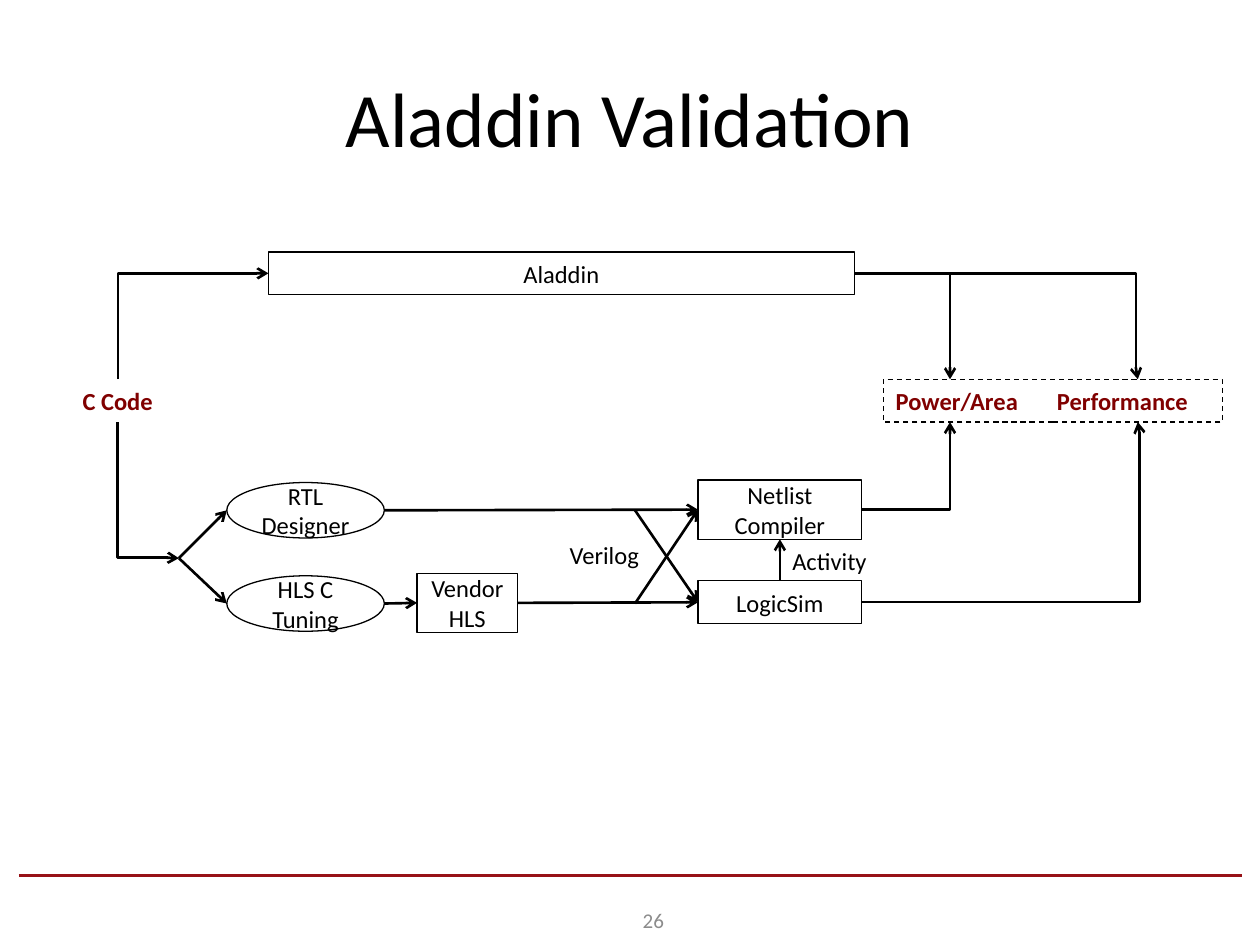
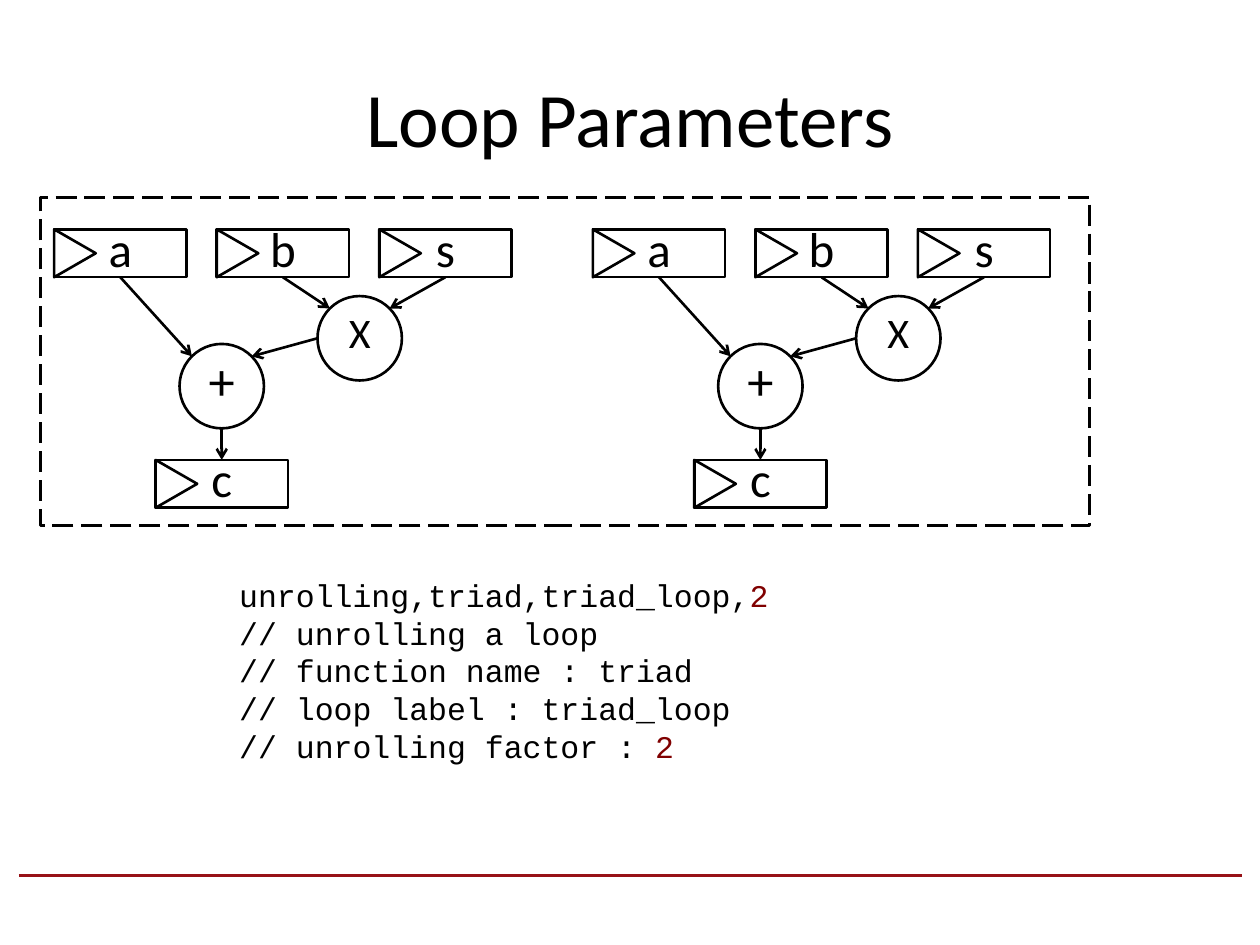
"""Build two slides: a validation flow and an unrolled loop datapath."""
from dataclasses import dataclass
from math import cos, radians, sin
from typing import NamedTuple

from lxml import etree
from pptx import Presentation
from pptx.dml.color import RGBColor
from pptx.enum.dml import MSO_LINE
from pptx.enum.shapes import MSO_CONNECTOR, MSO_SHAPE
from pptx.enum.text import MSO_ANCHOR, PP_ALIGN
from pptx.oxml.ns import qn
from pptx.util import Emu, Inches, Pt

COLORS = {"ink": "000000", "accent": "800000", "rule": "971217", "number": "8C8C8C"}
BODY_FONT, CODE_FONT = "Calibri", "Courier New"
WIDTH, HEIGHT = Inches(10), Inches(7.5)
COLUMNS, ROWS = 100, 75
TITLE_ONLY = 5
TOP, LEFT, BOTTOM, RIGHT = range(4)
RECTANGLE, OVAL, TRIANGLE = MSO_SHAPE.RECTANGLE, MSO_SHAPE.OVAL, MSO_SHAPE.ISOSCELES_TRIANGLE
STRAIGHT, ELBOW = MSO_CONNECTOR.STRAIGHT, MSO_CONNECTOR.ELBOW
DASH, LONG_DASH = MSO_LINE.DASH, MSO_LINE.LONG_DASH
ALIGN_LEFT, ALIGN_CENTER, ALIGN_RIGHT = PP_ALIGN.LEFT, PP_ALIGN.CENTER, PP_ALIGN.RIGHT
ANCHOR_TOP, ANCHOR_MIDDLE, ANCHOR_BOTTOM = MSO_ANCHOR.TOP, MSO_ANCHOR.MIDDLE, MSO_ANCHOR.BOTTOM
REGISTER_WIDTH, REGISTER_HEIGHT, REGISTER_STEP = 10.5, 3.8, 12.9
COPY_STEP = 42.75
OPERATOR_SIZE = 6.7

Point = tuple[float, float]


class Area(NamedTuple):
    """A place on the grid, in columns and rows."""

    column: float
    row: float
    width: float
    height: float


class Joint(NamedTuple):
    """The middle of one side of a rectangle."""

    shape: object
    side: int


@dataclass(frozen=True)
class Step:
    """A labelled step of the validation flow."""

    name: str
    text: str
    area: Area
    kind: int = RECTANGLE
    margin: float = 0.05


@dataclass(frozen=True)
class Label:
    """A free text of the validation flow."""

    text: str
    area: Area
    align: int


STEPS = (
    Step("aladdin", "Aladdin", Area(21.3, 20, 46.5, 3.4)),
    Step("designer", "RTL Designer", Area(18, 38.3, 12.5, 4.4), OVAL, 0),
    Step("tuning", "HLS C Tuning", Area(18, 45.7, 12.5, 4.4), OVAL, 0),
    Step("synthesis", "Vendor\nHLS", Area(33.1, 45.5, 8, 4.7), margin=0),
    Step("simulator", "LogicSim", Area(55.4, 46.1, 13, 3.4)),
    Step("compiler", "Netlist\nCompiler", Area(55.4, 38.1, 13, 4.7), margin=0),
)
LABELS = (
    Label("Verilog", Area(43.1, 42.3, 8.6, 3.4), ALIGN_RIGHT),
    Label("Activity", Area(61.9, 42.8, 8.6, 3.4), ALIGN_LEFT),
)
CODE = """unrolling,triad,triad_loop,2
// unrolling a loop
// function name : triad
// loop label : triad_loop
// unrolling factor : 2"""


def across(columns: float) -> Emu:
    """Turn grid columns into a length."""
    return Emu(round(WIDTH * columns / COLUMNS))


def down(rows: float) -> Emu:
    """Turn grid rows into a length."""
    return Emu(round(HEIGHT * rows / ROWS))


def place(area: Area) -> tuple[Emu, Emu, Emu, Emu]:
    """Turn a grid area into left, top, width and height."""
    return across(area.column), down(area.row), across(area.width), down(area.height)


def rgb(name: str) -> RGBColor:
    """Look up a named colour."""
    return RGBColor.from_string(COLORS[name])


def write(shape, text: str, *, size: float = 14, font: str = BODY_FONT, color: str = "ink",
          bold: bool = False, align: int = ALIGN_CENTER, anchor: int = ANCHOR_MIDDLE,
          margin: float = 0.05, side_margin: float | None = None, highlight: str = "",
          tab: float = 0) -> None:
    """Write formatted lines into a shape, with one optional highlighted word."""
    frame = shape.text_frame
    frame.word_wrap = True
    frame.vertical_anchor = anchor
    frame.margin_top = frame.margin_bottom = Inches(margin)
    frame.margin_left = frame.margin_right = Inches(2 * margin if side_margin is None else side_margin)
    for index, line in enumerate(text.split("\n")):
        paragraph = frame.add_paragraph() if index else frame.paragraphs[0]
        paragraph.alignment = align
        if tab:
            stops = etree.SubElement(paragraph._p.get_or_add_pPr(), qn("a:tabLst"))
            etree.SubElement(stops, qn("a:tab"), pos=str(across(tab)), algn="l")
        parts = line.partition(highlight) if highlight else (line,)
        for part in filter(None, parts):
            run = paragraph.add_run()
            run.text = part
            run.font.name, run.font.size, run.font.bold = font, Pt(size), bold
            run.font.color.rgb = rgb("accent" if part == highlight else color)


def add_outline(shapes, kind: int, area: Area, *, weight: float = 1.5, dash: int | None = None):
    """Add an unfilled preset shape."""
    shape = shapes.add_shape(kind, *place(area))
    shape.shadow.inherit = False
    shape.fill.background()
    shape.line.color.rgb = rgb("ink")
    shape.line.width = Pt(weight)
    if dash is not None:
        shape.line.dash_style = dash
    return shape


def add_label(slide, text: str, area: Area, **text_format):
    """Add a text box."""
    label = slide.shapes.add_textbox(*place(area))
    write(label, text, **text_format)
    return label


def add_line(slide, begin: Point | Joint, end: Point | Joint, *, kind: int = STRAIGHT,
             color: str = "ink", weight: float = 1.5, arrow: bool = True):
    """Add a connector between points or rectangle sides."""
    corners = [(0, 0) if isinstance(tip, Joint) else (across(tip[0]), down(tip[1]))
               for tip in (begin, end)]
    connector = slide.shapes.add_connector(kind, *corners[0], *corners[1])
    if isinstance(begin, Joint):
        connector.begin_connect(begin.shape, begin.side)
    if isinstance(end, Joint):
        connector.end_connect(end.shape, end.side)
    connector.line.color.rgb = rgb(color)
    connector.line.width = Pt(weight)
    properties = connector.element.spPr
    if arrow:
        etree.SubElement(properties.find(qn("a:ln")), qn("a:tailEnd"), type="arrow")
    etree.SubElement(properties, qn("a:effectLst"))
    return connector


def add_elbow(slide, begin: Point | Joint, end: Point | Joint, *, bend: float | None = None,
              vertical_first: bool = False) -> None:
    """Add an arrow with a right-angled turn, at the given share of its way if any."""
    connector = add_line(slide, begin, end, kind=ELBOW)
    properties = connector.element.spPr
    geometry = properties.find(qn("a:prstGeom"))
    if bend is None:
        geometry.set("prst", "bentConnector2")
    else:
        guides = geometry.find(qn("a:avLst"))
        etree.SubElement(guides, qn("a:gd"), name="adj1", fmla=f"val {round(bend * 100000)}")
    if vertical_first:
        upward = connector.end_y < connector.begin_y
        width, height = connector.width, connector.height
        shift = (width - height) // 2
        connector.left, connector.top = connector.left + shift, connector.top - shift
        connector.width, connector.height = height, width
        transform = properties.find(qn("a:xfrm"))
        transform.set("rot", "5400000" if upward else "16200000")
        transform.set("flipH", "1")
        transform.set("flipV", "1" if upward else "0")


def add_titled_slide(presentation, title: str):
    """Add a title-only slide with the shared title style."""
    slide = presentation.slides.add_slide(presentation.slide_layouts[TITLE_ONLY])
    placeholder = slide.shapes.title
    placeholder.left, placeholder.top, placeholder.width, placeholder.height = place(Area(5, 3, 90, 12.5))
    write(placeholder, title, size=44)
    return slide


def add_shared_rule(slide) -> None:
    """Draw the footer rule and hand it to the slide's layout."""
    rule = add_line(slide, (1.5, 69.5), (98.6, 69.5), color="rule", weight=2, arrow=False)
    slide.slide_layout.element.cSld.spTree.append(rule.element)


def build_validation(presentation) -> None:
    """Draw the validation flow."""
    slide = add_titled_slide(presentation, "Aladdin Validation")
    add_shared_rule(slide)
    source = add_label(slide, "C Code", Area(4.5, 30.1, 9.7, 3.4), color="accent", bold=True)
    results = add_outline(slide.shapes, RECTANGLE, Area(70.1, 30.1, 26.9, 3.4), weight=0.75, dash=DASH)
    write(results, "Power/Area\tPerformance", color="accent", bold=True, align=ALIGN_LEFT, tab=12.8)
    steps = {}
    for step in STEPS:
        steps[step.name] = add_outline(slide.shapes, step.kind, step.area, weight=0.75)
        write(steps[step.name], step.text, margin=step.margin)
    for label in LABELS:
        add_label(slide, label.text, label.area, align=label.align)
    add_label(slide, "26", Area(40.2, 71, 23.3, 4), size=12, color="number")

    aladdin, synthesis = steps["aladdin"], steps["synthesis"]
    compiler, simulator = steps["compiler"], steps["simulator"]
    fork, power, performance = (14.2, 44.3), 75.4, 90.3
    upper, lower, crossing = 40.5, 47.9, 50.4
    results_top, results_bottom = 30.1, 33.5
    add_elbow(slide, Joint(source, TOP), Joint(aladdin, LEFT), vertical_first=True)
    add_elbow(slide, Joint(source, BOTTOM), fork, bend=0.997, vertical_first=True)
    add_elbow(slide, Joint(aladdin, RIGHT), (performance, results_top), bend=0.994)
    add_elbow(slide, Joint(simulator, RIGHT), (performance, results_bottom), bend=1.006)
    add_elbow(slide, Joint(compiler, RIGHT), (power, results_bottom))
    for begin, end in (
        ((power, 21.7), (power, results_top)),
        (fork, (18, upper)),
        (fork, (18, lower)),
        ((30.5, upper), Joint(compiler, LEFT)),
        ((30.5, lower), Joint(synthesis, LEFT)),
        (Joint(synthesis, RIGHT), Joint(simulator, LEFT)),
        ((crossing, lower), Joint(compiler, LEFT)),
        ((crossing, upper), Joint(simulator, LEFT)),
        (Joint(simulator, TOP), Joint(compiler, BOTTOM)),
    ):
        add_line(slide, begin, end)


def add_register(slide, name: str, column: float, row: float):
    """Draw a register with its clock mark and return its box."""
    group = slide.shapes.add_group_shape()
    box = add_outline(group.shapes, RECTANGLE, Area(column, row, REGISTER_WIDTH, REGISTER_HEIGHT))
    write(box, name, size=28, anchor=ANCHOR_BOTTOM, margin=0)
    mark = add_outline(group.shapes, TRIANGLE, Area(column - 0.25, row + 0.25, REGISTER_HEIGHT, 3.3))
    mark.rotation = 90
    return box


def add_operator(slide, symbol: str, size: float, column: float, row: float) -> Area:
    """Draw a round operator and return its area."""
    area = Area(column, row, OPERATOR_SIZE, OPERATOR_SIZE)
    circle = add_outline(slide.shapes, OVAL, area)
    write(circle, symbol, size=size, margin=0)
    circle.text_frame.margin_bottom = down(1)
    return area


def rim(area: Area, degrees: float) -> Point:
    """Find the point of a circle at an angle, clockwise from the right."""
    radius, angle = area.width / 2, radians(degrees)
    return area.column + radius * (1 + cos(angle)), area.row + radius * (1 + sin(angle))


def add_datapath(slide, shift: float) -> None:
    """Draw one copy of the loop body."""
    a, b, s = (add_register(slide, name, 4.3 + shift + index * REGISTER_STEP, 18.2)
               for index, name in enumerate("abs"))
    c = add_register(slide, "c", 12.35 + shift, 36.5)
    product = add_operator(slide, "X", 24, 25.2 + shift, 23.5)
    total = add_operator(slide, "+", 30, 14.25 + shift, 27.3)
    for begin, end in (
        (Joint(s, BOTTOM), rim(product, -45)),
        (Joint(b, BOTTOM), rim(product, -135)),
        (Joint(a, BOTTOM), rim(total, -135)),
        (rim(product, 180), rim(total, -45)),
        (rim(total, 90), Joint(c, TOP)),
    ):
        add_line(slide, begin, end)


def build_loop(presentation) -> None:
    """Draw the loop unrolled twice and its directive."""
    slide = add_titled_slide(presentation, "Loop Parameters")
    for copy_index in range(2):
        add_datapath(slide, copy_index * COPY_STEP)
    add_label(slide, CODE, Area(18, 45.2, 58, 16.2), size=18, font=CODE_FONT,
              align=ALIGN_LEFT, anchor=ANCHOR_TOP, highlight="2")
    add_outline(slide.shapes, RECTANGLE, Area(3.2, 15.7, 83.3, 26), dash=LONG_DASH)


def main() -> None:
    """Build and save the presentation."""
    presentation = Presentation()
    presentation.slide_width, presentation.slide_height = WIDTH, HEIGHT
    build_validation(presentation)
    build_loop(presentation)
    presentation.save("out.pptx")


if __name__ == "__main__":
    main()
